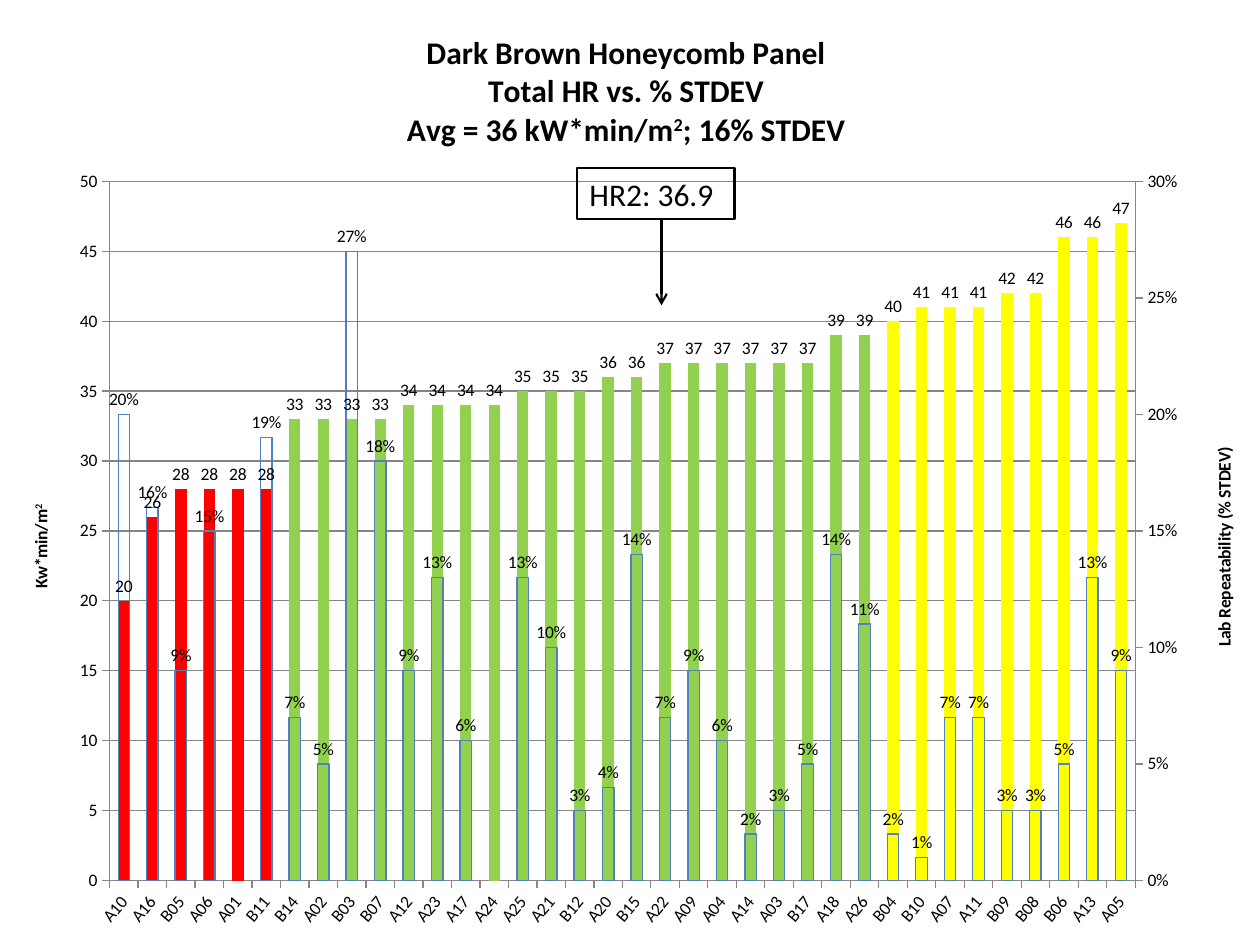
from copy import deepcopy

from lxml import etree
from pptx import Presentation
from pptx.chart.axis import ValueAxis
from pptx.chart.data import CategoryChartData
from pptx.dml.color import RGBColor
from pptx.enum.chart import XL_CHART_TYPE, XL_LABEL_POSITION, XL_TICK_MARK
from pptx.enum.shapes import MSO_CONNECTOR, MSO_SHAPE
from pptx.enum.text import MSO_ANCHOR, PP_ALIGN
from pptx.oxml import parse_xml
from pptx.oxml.ns import nsdecls, qn
from pptx.util import Inches, Pt

COLUMN = XL_CHART_TYPE.COLUMN_CLUSTERED
ABOVE = XL_LABEL_POSITION.OUTSIDE_END
OUT = XL_TICK_MARK.OUTSIDE
BOX, LINE = MSO_SHAPE.RECTANGLE, MSO_CONNECTOR.STRAIGHT
LEFT, MIDDLE = PP_ALIGN.LEFT, MSO_ANCHOR.MIDDLE
FONT = "Calibri"
HEX = {"low": "FF0000", "mid": "92D050", "high": "FFFF00",
       "edge": "4F81BD", "grid": "868686", "ink": "000000"}
RGB = {name: RGBColor.from_string(code) for name, code in HEX.items()}

LABS = ("A10 A16 B05 A06 A01 B11 B14 A02 B03 B07 A12 A23 "
        "A17 A24 A25 A21 B12 A20 B15 A22 A09 A04 A14 A03 "
        "B17 A18 A26 B04 B10 A07 A11 B09 B08 B06 A13 A05").split()
HEAT = [20, 26, 28, 28, 28, 28, 33, 33, 33, 33, 34, 34,
        34, 34, 35, 35, 35, 36, 36, 37, 37, 37, 37, 37,
        37, 39, 39, 40, 41, 41, 41, 42, 42, 46, 46, 47]
SPREAD = [0.2, 0.16, 0.09, 0.15, None, 0.19, 0.07, 0.05, 0.27, 0.18, 0.09, 0.13,
          0.06, None, 0.13, 0.1, 0.03, 0.04, 0.14, 0.07, 0.09, 0.06, 0.02, 0.03,
          0.05, 0.14, 0.11, 0.02, 0.01, 0.07, 0.07, 0.03, 0.03, 0.05, 0.13, 0.09]


def place(part, index, **share):
    """Give a chart part a fixed place, in shares of the chart's size."""
    for old in part.findall(qn("c:layout")):
        part.remove(old)
    inner = '<c:layoutTarget val="inner"/>' if "w" in share else ""
    modes = "".join(f'<c:{k}Mode val="edge"/>' for k in share if k in "xy")
    sizes = "".join(f'<c:{k} val="{v}"/>' for k, v in share.items())
    part.insert(index, parse_xml(
        f'<c:layout {nsdecls("c")}><c:manualLayout>{inner}{modes}{sizes}'
        '</c:manualLayout></c:layout>'))


def write(title, lines, size, x, y):
    """Fill and place a title; text between carets is raised."""
    frame = title.text_frame
    for row, line in enumerate(lines):
        para = frame.paragraphs[0] if row == 0 else frame.add_paragraph()
        for i, text in enumerate(line.split("^")):
            if not text:
                continue
            run = para.add_run()
            run.text = text
            run.font.name, run.font.size, run.font.bold = FONT, Pt(size), True
            run.font.color.rgb = RGB["ink"]
            if i % 2:
                run._r.get_or_add_rPr().set("baseline", "30000")
    place(title._element, 1, x=x, y=y)


deck = Presentation()
deck.slide_width, deck.slide_height = Inches(10), Inches(7.5)
W, H = deck.slide_width, deck.slide_height
slide = deck.slides.add_slide(deck.slide_layouts[6])

# Chart
data = CategoryChartData()
data.categories = LABS
data.add_series("Series 1", HEAT, "0")
data.add_series("Series 2", SPREAD, "0%")
chart = slide.shapes.add_chart(COLUMN, 0, 0, W, H, data).chart
chart.has_legend = False
chart.font.name, chart.font.size = FONT, Pt(10)
chart.font.color.rgb = RGB["ink"]

# Second series on its own pair of axes
cat, val = chart.category_axis, chart.value_axis
area = cat._element.getparent()
first = area.find(qn("c:barChart"))
second = deepcopy(first)
first.remove(first.findall(qn("c:ser"))[1])
second.remove(second.find(qn("c:ser")))
first.addnext(second)
cat2, val2 = deepcopy(cat._element), deepcopy(val._element)
val._element.addnext(val2)
val2.addnext(cat2)
ids = ["5001", "5002"]
for ref, key in zip(second.findall(qn("c:axId")), ids):
    ref.set("val", key)
for axis, own, other in ((cat2, *ids), (val2, *ids[::-1])):
    axis.find(qn("c:axId")).set("val", own)
    axis.find(qn("c:crossAx")).set("val", other)
cat2.find(qn("c:delete")).set("val", "1")
val2.find(qn("c:axPos")).set("val", "r")
val2.find(qn("c:crosses")).set("val", "max")
right = ValueAxis(val2)

# Axes
for axis, top, step, form, label, x, y in (
        (val, 50, 5, "0", "Kw*min/m^2^", 0.02, 0.53),
        (right, 0.3, 0.05, "0%", "Lab Repeatability (% STDEV)", 0.96, 0.47)):
    axis.minimum_scale, axis.maximum_scale, axis.major_unit = 0, top, step
    axis.tick_labels.number_format = form
    axis.tick_labels.number_format_is_linked = False
    axis.has_major_gridlines = axis is val
    write(axis.axis_title, [label], 10, x, y)
    turn = axis.axis_title.text_frame._txBody.bodyPr
    turn.set("rot", "-5400000")
    turn.set("vert", "horz")
val.major_gridlines.format.line.color.rgb = RGB["grid"]
for axis in (cat, val, right):
    axis.major_tick_mark = OUT
    axis.format.line.color.rgb = RGB["grid"]
    font = axis.tick_labels.font
    font.name, font.size, font.color.rgb = FONT, Pt(10), RGB["ink"]
cat._element.txPr.bodyPr.set("rot", "-3000000")

# Columns
for plot, form in zip(chart.plots, ("#,##0", "0%")):
    plot.gap_width, plot.vary_by_categories = 150, False
    bars = plot.series[0]
    bars.invert_if_negative = False
    tags = bars.data_labels
    tags.show_value, tags.position = True, ABOVE
    tags.number_format, tags.number_format_is_linked = form, False
    tags.font.name, tags.font.size = FONT, Pt(10)
    tags.font.color.rgb = RGB["ink"]
heat, spread = (plot.series[0] for plot in chart.plots)
heat.format.fill.solid()
heat.format.fill.fore_color.rgb = RGB["mid"]
for i, value in enumerate(HEAT):
    if value < 30 or value >= 40:
        fill = heat.points[i].format.fill
        fill.solid()
        fill.fore_color.rgb = RGB["low" if value < 30 else "high"]
spread.format.fill.background()
spread.format.line.color.rgb = RGB["edge"]
spread.format.line.width = Pt(0.75)

chart.has_title = True
write(chart.chart_title,
      ["Dark Brown Honeycomb Panel", "Total HR vs. % STDEV",
       "Avg = 36 kW*min/m^2^; 16% STDEV"], 18, 0.32, 0.03)
place(area, 0, x=0.087, y=0.192, w=0.814, h=0.74)

# Callout and arrow
box = slide.shapes.add_shape(BOX, int(W * 0.458), int(H * 0.178),
                             int(W * 0.125), int(H * 0.054))
box.shadow.inherit = False
box.fill.background()
frame = box.text_frame
frame.word_wrap, frame.vertical_anchor = True, MIDDLE
para = frame.paragraphs[0]
para.alignment = LEFT
run = para.add_run()
run.text = "HR2: 36.9"
run.font.name, run.font.size = FONT, Pt(18)
run.font.color.rgb = RGB["ink"]

x = int(W * 0.525)
arrow = slide.shapes.add_connector(LINE, x, int(H * 0.232), x, int(H * 0.323))
for shape in (box, arrow):
    shape.line.color.rgb = RGB["ink"]
    shape.line.width = Pt(1.25)
etree.SubElement(arrow.line._get_or_add_ln(), qn("a:tailEnd"), type="arrow")
etree.SubElement(arrow._element.spPr, qn("a:effectLst"))

deck.save("out.pptx")
